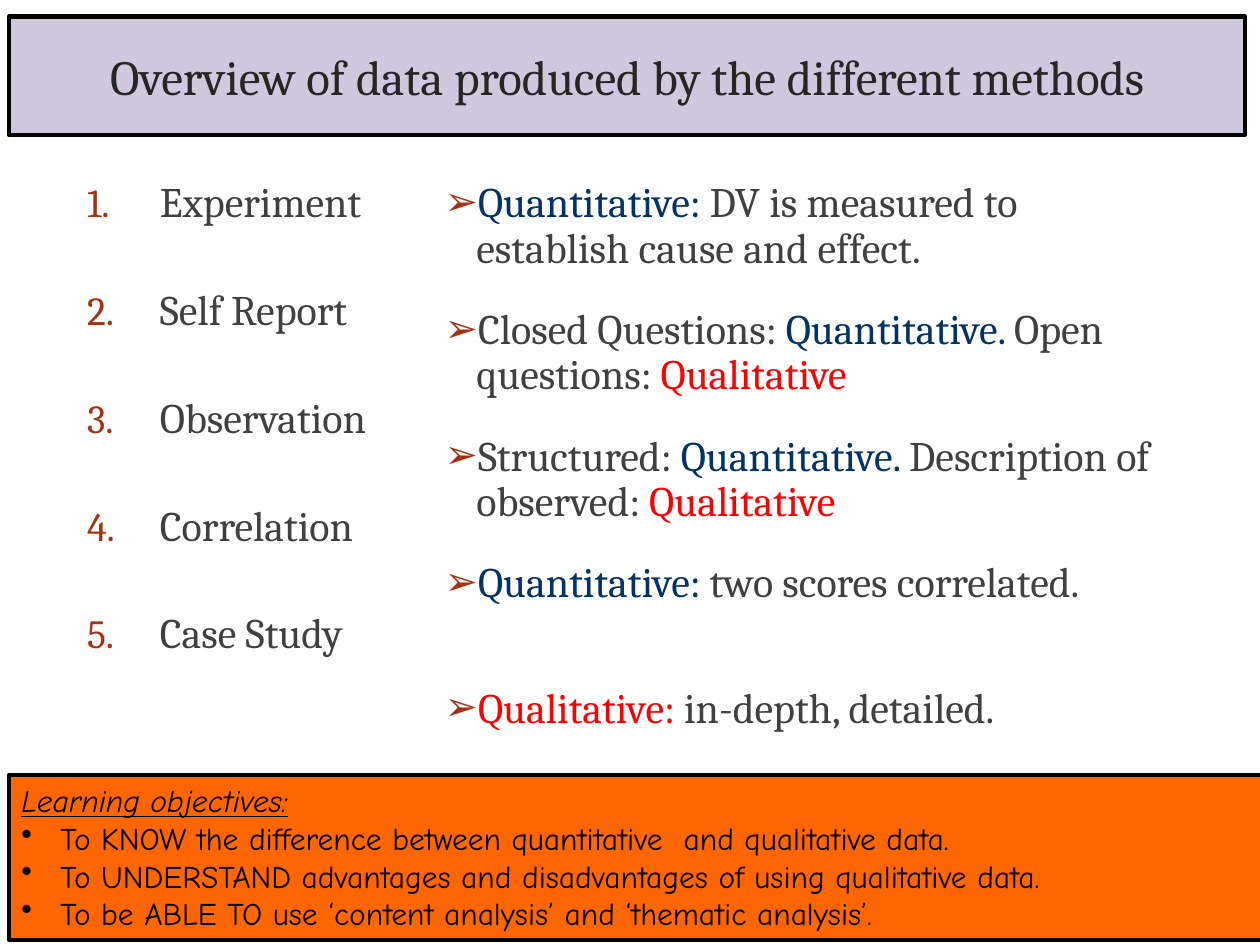
from lxml import etree
from pptx import Presentation
from pptx import util as u
from pptx.dml.color import RGBColor
from pptx.enum import shapes, text
from pptx.oxml import ns

BLACK = RGBColor(0x00, 0x00, 0x00)
TITLE_INK = RGBColor(0x26, 0x26, 0x26)
INK = RGBColor(0x40, 0x40, 0x40)
NAVY = RGBColor(0x00, 0x33, 0x66)
RED = RGBColor(0xFF, 0x00, 0x00)
RUST = RGBColor(0xA6, 0x32, 0x12)
LILAC = RGBColor(0xD0, 0xC8, 0xDE)
ORANGE = RGBColor(0xFF, 0x66, 0x00)
SERIF, COMIC = "Cambria", "Comic Neue"

METHODS = ["Experiment", "Self Report", "Observation", "Correlation", "Case Study"]
DATA_TYPES = [
    [("Quantitative: ", NAVY), ("DV is measured to establish cause and effect.", INK)],
    [("Closed Questions: ", INK), ("Quantitative. ", NAVY),
     ("Open questions: ", INK), ("Qualitative", RED)],
    [("Structured: ", INK), ("Quantitative. ", NAVY),
     ("Description of observed: ", INK), ("Qualitative", RED)],
    [("Quantitative: ", NAVY), ("two scores correlated.", INK)],
    [("Qualitative: ", RED), ("in-depth, detailed.", INK)],
]
OBJECTIVES = [
    "To KNOW the difference between quantitative  and qualitative data.",
    "To UNDERSTAND advantages and disadvantages of using qualitative data.",
    "To be ABLE TO use ‘content analysis’ and ‘thematic analysis’.",
]


def place(shape, box):
    """Move a shape to a box of left, top, width and height in centimetres."""
    shape.left, shape.top, shape.width, shape.height = map(u.Cm, box)


def paint(shape, fill, width):
    """Give a shape a solid fill and a black outline."""
    shape.fill.solid()
    shape.fill.fore_color.rgb = fill
    shape.line.color.rgb = BLACK
    shape.line.width = u.Pt(width)


def set_font(font, name, size, color):
    """Set the typeface, size and colour of a font."""
    font.name, font.size = name, u.Pt(size)
    font.color.rgb = color


def set_bullet(para, indent, tag, color=BLACK, percent=100, **attributes):
    """Hang a paragraph on a bullet or an automatic number."""
    props = para._p.get_or_add_pPr()
    props.set("marL", str(u.Cm(indent)))
    props.set("indent", str(-u.Cm(indent)))
    tint = etree.SubElement(props, ns.qn("a:buClr"))
    etree.SubElement(tint, ns.qn("a:srgbClr"), val=str(color))
    etree.SubElement(props, ns.qn("a:buSzPct"), val=str(percent * 1000))
    etree.SubElement(props, ns.qn(tag), **attributes)


def add_paragraphs(frame, count):
    """Return the given number of paragraphs of an empty text frame."""
    return [frame.paragraphs[0]] + [frame.add_paragraph() for _ in range(count - 1)]


def fill_title(title, box):
    """Turn the title placeholder into the framed banner."""
    place(title, box)
    paint(title, LILAC, 2.5)
    frame = title.text_frame
    frame.auto_size = text.MSO_AUTO_SIZE.NONE
    frame.vertical_anchor = text.MSO_ANCHOR.MIDDLE
    frame.text = "Overview of data produced by the different methods"
    para = frame.paragraphs[0]
    para.alignment = text.PP_ALIGN.CENTER
    set_font(para.font, SERIF, 28, TITLE_INK)


def fill_list(body, box, items, gaps, indent, tag, **attributes):
    """Fill a body placeholder with items of coloured spans."""
    place(body, box)
    frame = body.text_frame
    frame.auto_size = text.MSO_AUTO_SIZE.NONE
    for para, spans, gap in zip(add_paragraphs(frame, len(items)), items, gaps):
        para.line_spacing = 0.9
        para.space_before = u.Pt(gap)
        set_bullet(para, indent, tag, RUST, 95, **attributes)
        set_font(para.font, SERIF, 24, INK)
        for words, color in spans:
            span = para.add_run()
            span.text = words
            span.font.color.rgb = color


def add_objectives(page, box):
    """Draw the box with the learning objectives."""
    panel = page.shapes.add_shape(shapes.MSO_SHAPE.RECTANGLE, *map(u.Cm, box))
    panel.shadow.inherit = False
    paint(panel, ORANGE, 2)
    frame = panel.text_frame
    frame.word_wrap = True
    frame.vertical_anchor = text.MSO_ANCHOR.TOP
    heading, *bullets = add_paragraphs(frame, len(OBJECTIVES) + 1)
    heading.text = "Learning objectives:"
    heading.font.italic = heading.font.underline = True
    for para, words in zip(bullets, OBJECTIVES):
        para.text = words
        set_bullet(para, 0.79, "a:buChar", char="•")
    for para in frame.paragraphs:
        para.alignment = text.PP_ALIGN.LEFT
        set_font(para.font, COMIC, 18, BLACK)


def main():
    """Build the slide and save it."""
    deck = Presentation()
    deck.slide_width, deck.slide_height = u.Cm(25.4), u.Cm(19.05)
    page = deck.slides.add_slide(deck.slide_layouts[3])
    title, methods, data_types = page.placeholders
    fill_title(title, (0.18, 0.33, 24.92, 2.39))
    fill_list(methods, (1.5, 3.53, 7.59, 12.27), [[(name, INK)] for name in METHODS],
              [0] + [35.7] * 4, 1.47, "a:buAutoNum", type="arabicPeriod")
    fill_list(data_types, (8.71, 3.53, 15.01, 12.27), DATA_TYPES,
              [0] + [20.6] * 3 + [45.7], 0.64, "a:buChar", char="➢")
    add_objectives(page, (0.18, 15.62, 25.43, 3.33))
    deck.save("out.pptx")


if __name__ == "__main__":
    main()
